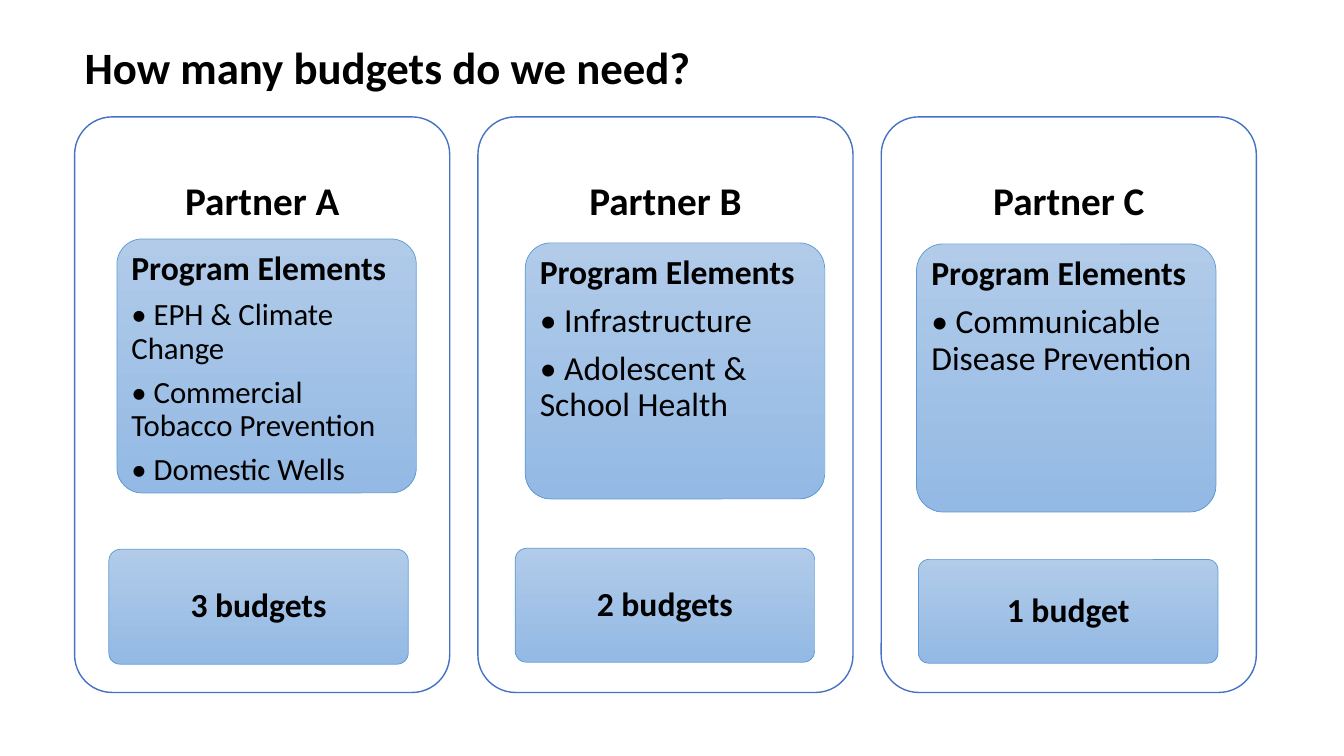
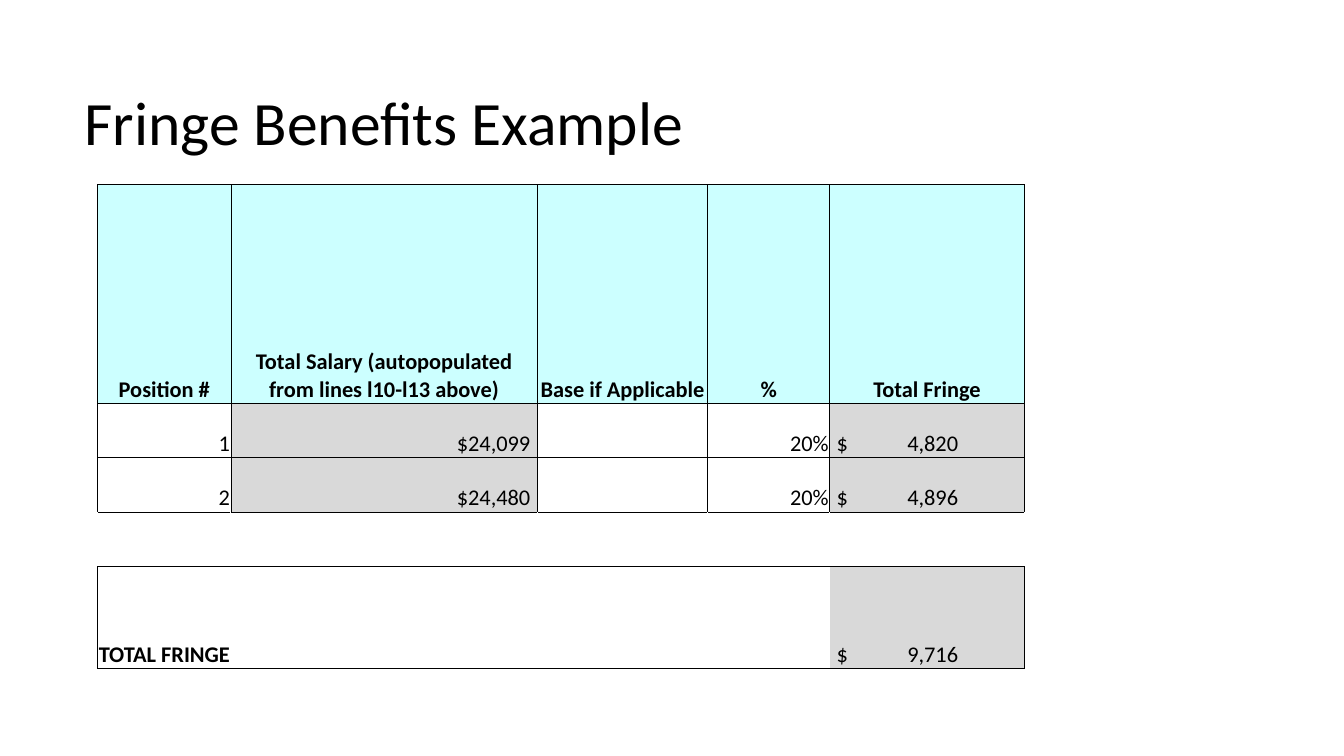
from pptx import Presentation
from pptx.dml.color import RGBColor
from pptx.enum.shapes import MSO_SHAPE
from pptx.enum.text import MSO_ANCHOR, PP_ALIGN
from pptx.oxml import parse_xml
from pptx.oxml.ns import nsdecls
from pptx.util import Pt

PX = 9144
FONT = "Calibri"
BLACK = RGBColor(0x00, 0x00, 0x00)
WHITE = RGBColor(0xFF, 0xFF, 0xFF)
PANEL_LINE = RGBColor(0x44, 0x72, 0xC4)
BOX_LINE = RGBColor(0x5B, 0x9B, 0xD5)
BOX_TOP = RGBColor(0xB1, 0xCB, 0xE9)
BOX_BOTTOM = RGBColor(0x93, 0xB9, 0xE4)
HEADER_FILL = RGBColor(0xCC, 0xFF, 0xFF)
GREY = RGBColor(0xD9, 0xD9, 0xD9)

MARGIN = 74
PANEL_TOP, PANEL_W, PANEL_H, PANEL_STEP = 116, 372, 571, 400
BOX_W = 297
COLUMNS = [132, 304, 169, 121, 193]
ROWS = [217, 54, 54, 54, 101]
AMOUNT_TAB = 70

PARTNERS = [
    ("Partner A", (116, 237, 252), 22,
     ["EPH & Climate Change", "Commercial Tobacco Prevention", "Domestic Wells"],
     (108, 545, 114), "3 budgets"),
    ("Partner B", (521, 241, 254), 24,
     ["Infrastructure", "Adolescent & School Health"],
     (511, 544, 113), "2 budgets"),
    ("Partner C", (909, 242, 266), 24,
     ["Communicable Disease Prevention"],
     (911, 555, 103), "1 budget"),
]

HEADERS = ["Position #", "Total Salary (autopopulated from lines l10-l13 above)",
           "Base if Applicable", "%", "Total Fringe"]
POSITIONS = [["1", "$24,099", "", "20%", "$\t4,820"],
             ["2", "$24,480", "", "20%", "$\t4,896"]]
TOTAL = ["TOTAL FRINGE", "", "", "", "$\t9,716"]


def emu(*lengths):
    return [n * PX for n in lengths]


def apply(target, values):
    for name, value in values.items():
        setattr(target, name, value)


def add_run(p, text, size, bold=False):
    r = p.add_run()
    r.text = text
    apply(r.font, {"name": FONT, "size": Pt(size), "bold": bold})
    r.font.color.rgb = BLACK


def write(tf, lines, align=PP_ALIGN.LEFT, anchor=MSO_ANCHOR.MIDDLE, inset=(7, 5)):
    across, down = emu(*inset)
    apply(tf, {"word_wrap": True, "vertical_anchor": anchor,
               "margin_left": across, "margin_right": across,
               "margin_top": down, "margin_bottom": down})
    for i, (text, size, bold) in enumerate(lines):
        p = tf.paragraphs[0] if i == 0 else tf.add_paragraph()
        apply(p, {"alignment": align, "line_spacing": 0.9})
        if i < len(lines) - 1:
            p.space_after = Pt(round(size * 0.35, 1))
        add_run(p, text, size, bold)


def add_text(s, box, lines, **style):
    write(s.shapes.add_textbox(*emu(*box)).text_frame, lines, **style)


def add_title(s, box, text, size, bold=False):
    add_text(s, box, [(text, size, bold)], inset=(10, 5))


def add_round_rect(s, box, line_color, line_width):
    sp = s.shapes.add_shape(MSO_SHAPE.ROUNDED_RECTANGLE, *emu(*box))
    sp.adjustments[0] = 0.1
    sp.shadow.inherit = False
    sp.line.color.rgb = line_color
    sp.line.width = Pt(line_width)
    return sp


def add_panel(s, left, heading):
    sp = add_round_rect(s, (left, PANEL_TOP, PANEL_W, PANEL_H), PANEL_LINE, 1)
    sp.fill.solid()
    sp.fill.fore_color.rgb = WHITE
    add_text(s, (left, PANEL_TOP, PANEL_W, 171), [(heading, 28, True)],
             align=PP_ALIGN.CENTER, inset=(12, 12))


def add_blue_box(s, place, lines, **style):
    left, top, height = place
    sp = add_round_rect(s, (left, top, BOX_W, height), BOX_LINE, 0.5)
    sp.fill.gradient()
    sp.fill.gradient_angle = 270
    for stop, color in zip(sp.fill.gradient_stops, (BOX_TOP, BOX_BOTTOM)):
        stop.color.rgb = color
    write(sp.text_frame, lines, **style)


def set_borders(cell, sides):
    tcPr = cell._tc.get_or_add_tcPr()
    for i, side in enumerate(side for side in "LRTB" if side in sides):
        tcPr.insert(i, parse_xml(
            f'<a:ln{side} {nsdecls("a")} w="6350"><a:solidFill>'
            f'<a:srgbClr val="{BLACK}"/></a:solidFill></a:ln{side}>'))


def set_cell(cell, text, align, fill=None, bold=False, left=1, right=1, sides="LRTB"):
    apply(cell, {"vertical_anchor": MSO_ANCHOR.BOTTOM, "margin_left": left * PX,
                 "margin_right": right * PX, "margin_top": PX, "margin_bottom": 0})
    if fill is None:
        cell.fill.background()
    else:
        cell.fill.solid()
        cell.fill.fore_color.rgb = fill
    set_borders(cell, sides)
    p = cell.text_frame.paragraphs[0]
    p.alignment = align
    if "\t" in text:
        p._p.get_or_add_pPr().append(parse_xml(
            f'<a:tabLst {nsdecls("a")}><a:tab pos="{AMOUNT_TAB * PX}" algn="l"/></a:tabLst>'))
    if text:
        add_run(p, text, 16, bold)


def add_fringe_table(s):
    frame = s.shapes.add_table(len(ROWS), len(COLUMNS),
                               *emu(97, 183, sum(COLUMNS), sum(ROWS)))
    table = frame.table
    apply(table, {"first_row": False, "horz_banding": False})
    for column, width in zip(table.columns, COLUMNS):
        column.width = width * PX
    for row, height in zip(table.rows, ROWS):
        row.height = height * PX

    amount = {"align": PP_ALIGN.LEFT, "fill": GREY, "left": 7}
    number = {"align": PP_ALIGN.RIGHT}
    salary = {"align": PP_ALIGN.RIGHT, "fill": GREY, "right": 7}
    styles = [number, salary, number, number, amount]
    total_sides = ["LTB", "TB", "TB", "TB", "RTB"]
    for c, header in enumerate(HEADERS):
        set_cell(table.cell(0, c), header, PP_ALIGN.CENTER, HEADER_FILL, True)
        for r, values in enumerate(POSITIONS, 1):
            set_cell(table.cell(r, c), values[c], **styles[c])
        set_cell(table.cell(3, c), "", PP_ALIGN.LEFT, sides="TB")
        style = amount if c == 4 else {"align": PP_ALIGN.LEFT, "bold": True}
        set_cell(table.cell(4, c), TOTAL[c], sides=total_sides[c], **style)
    table.cell(4, 0).merge(table.cell(4, 1))


def build_budgets(s):
    add_title(s, (MARGIN, 24, 1172, 91), "How many budgets do we need?", 32, True)
    for i, (name, elements_at, size, elements, budget_at, budget) in enumerate(PARTNERS):
        add_panel(s, MARGIN + i * PANEL_STEP, name)
        lines = [("Program Elements", 24, True)]
        lines += [(f"• {element}", size, False) for element in elements]
        add_blue_box(s, elements_at, lines, anchor=MSO_ANCHOR.TOP)
        add_blue_box(s, budget_at, [(budget, 24, True)], align=PP_ALIGN.CENTER)


def build_fringe(s):
    add_title(s, (MARGIN, 67, 940, 116), "Fringe Benefits Example", 44)
    add_fringe_table(s)


def main():
    prs = Presentation()
    prs.slide_width, prs.slide_height = emu(1333, 750)
    for build in (build_budgets, build_fringe):
        build(prs.slides.add_slide(prs.slide_layouts[6]))
    prs.save("out.pptx")


if __name__ == "__main__":
    main()
